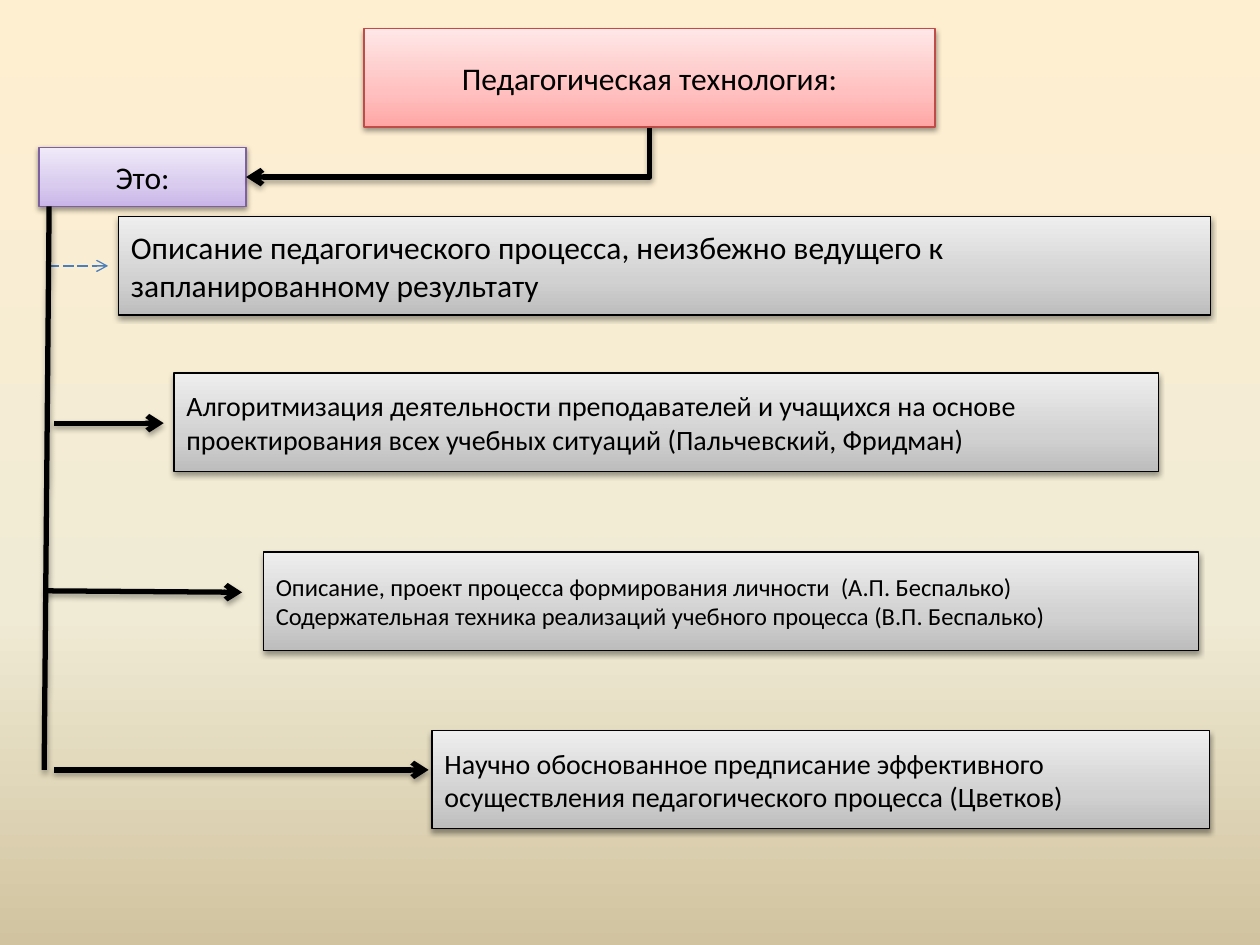
from lxml.etree import SubElement as Sub
from pptx import Presentation
from pptx.dml.color import RGBColor as Rgb
from pptx.enum.dml import MSO_LINE as Dash
from pptx.enum.shapes import MSO_CONNECTOR as Link, MSO_SHAPE as Form
from pptx.enum.text import MSO_ANCHOR as Anchor, MSO_AUTO_SIZE as Auto, PP_ALIGN as Align
from pptx.oxml.ns import qn
from pptx.util import Cm, Pt

HUES = {"black": "000000", "red": "BF4C48", "violet": "7D60A0", "blue": "4B7EBC"}
FADES = {
    "sand": {0: "FFEFD1", 65: "F0EBD5", 100: "D1C39F"},
    "rose": {0: "FFA6A5", 35: "FFC0BF", 100: "FFE7E7"},
    "lilac": {0: "C9B5E8", 35: "D8CBEE", 100: "F0EAF9"},
    "grey": {0: "BDBDBD", 35: "D1D1D1", 100: "EEEEEE"},
}
BOX_H = 1.98
BOXES = [
    (2.39, 4.37, 22.02, 18, "Описание педагогического процесса, неизбежно ведущего к запланированному результату"),
    (3.51, 7.52, 19.84, 16, "Алгоритмизация деятельности преподавателей и учащихся на основе "
                            "проектирования всех учебных ситуаций (Пальчевский, Фридман)"),
    (5.31, 11.13, 18.85, 14, "Описание, проект процесса формирования личности  (А.П. Беспалько)\n"
                             "Содержательная техника реализаций учебного процесса (В.П. Беспалько)"),
    (8.71, 14.73, 15.67, 16, "Научно обоснованное предписание эффективного "
                             "осуществления педагогического процесса (Цветков)"),
]
ARROWS = [
    (1.09, 8.53, 3.3, 8.53),
    (0.89, 11.91, 4.88, 11.94),
    (1.09, 15.52, 8.64, 15.52),
]


def put(obj, vals):
    """Set each attribute named in a dict."""
    for name, val in vals.items():
        setattr(obj, name, val)


def fade(fill, root, key, angle):
    """Give a fill the named gradient."""
    fill.gradient()
    fill.gradient_angle = angle
    stops = next(root.iter(qn("a:gsLst")))
    stops.clear()
    for pos, hue in FADES[key].items():
        stop = Sub(stops, qn("a:gs"), pos=str(pos * 1000))
        Sub(stop, qn("a:srgbClr"), val=hue)


def shade(shape, alpha, dist):
    """Set a soft shadow below, or none when alpha is zero."""
    fx = Sub(shape.element.spPr, qn("a:effectLst"))
    if alpha:
        cast = Sub(fx, qn("a:outerShdw"), blurRad="40000", dist=str(dist), dir="5400000", rotWithShape="0")
        hue = Sub(cast, qn("a:srgbClr"), val=HUES["black"])
        Sub(hue, qn("a:alpha"), val=str(alpha * 1000))


def style(shape, text, size, key, edge, align):
    """Fill, outline and label a box."""
    fade(shape.fill, shape.element, key, 90)
    shape.line.color.rgb = Rgb.from_string(HUES[edge])
    shape.line.width = Pt(0.75)
    shade(shape, 38, 20000)
    frame = shape.text_frame
    frame.text = text
    put(frame, {"word_wrap": True, "auto_size": Auto.NONE, "vertical_anchor": Anchor.MIDDLE})
    for para in frame.paragraphs:
        para.alignment = align
        put(para.font, {"name": "Calibri", "size": Pt(size)})
        para.font.color.rgb = Rgb.from_string(HUES["black"])


def box(slide, left, top, width, height, *look):
    """Add a styled rectangle."""
    spot = map(Cm, (left, top, width, height))
    style(slide.shapes.add_shape(Form.RECTANGLE, *spot), *look)


def line(slide, ends, hue="black", width=3, dash=None, head=True, kind=Link.STRAIGHT, alpha=35):
    """Add a connector, with an arrowhead if wanted."""
    link = slide.shapes.add_connector(kind, *map(Cm, ends))
    link.line.color.rgb = Rgb.from_string(HUES[hue])
    put(link.line, {"width": Pt(width), "dash_style": dash})
    if head:
        Sub(link.line._get_or_add_ln(), qn("a:tailEnd"), type="arrow")
    shade(link, alpha, 23000)
    return link


def bend(slide, x, y, to_x, to_y):
    """Add an arrow that runs down, then left."""
    mid_x, mid_y = (x + to_x) / 2, (y + to_y) / 2
    half_w, half_h = (to_y - y) / 2, (x - to_x) / 2
    ends = (mid_x - half_w, mid_y - half_h, mid_x + half_w, mid_y + half_h)
    props = line(slide, ends, kind=Link.ELBOW).element.spPr
    props.find(qn("a:xfrm")).set("rot", "5400000")
    props.find(qn("a:prstGeom")).set("prst", "bentConnector2")


def main():
    """Build the slide and save it."""
    deck = Presentation()
    put(deck, {"slide_width": Cm(25.4), "slide_height": Cm(19.05)})
    slide = deck.slides.add_slide(deck.slide_layouts[5])
    fade(slide.background.fill, slide.element, "sand", 270)
    title = slide.shapes.title
    put(title, {"left": Cm(7.34), "top": Cm(0.58), "width": Cm(11.51), "height": Cm(BOX_H)})
    style(title, "Педагогическая технология:", 18, "rose", "red", Align.CENTER)
    box(slide, 0.79, 2.97, 4.17, 1.19, "Это:", 18, "lilac", "violet", Align.CENTER)
    bend(slide, 13.1, 2.58, 4.96, 3.57)
    for left, top, width, size, text in BOXES:
        box(slide, left, top, width, BOX_H, text, size, "grey", "black", Align.LEFT)
    line(slide, (0.99, 5.36, 2.18, 5.36), "blue", 0.75, Dash.LONG_DASH, alpha=0)
    line(slide, (0.99, 4.16, 0.89, 15.52), head=False)
    for ends in ARROWS:
        line(slide, ends)
    deck.save("out.pptx")


if __name__ == "__main__":
    main()
